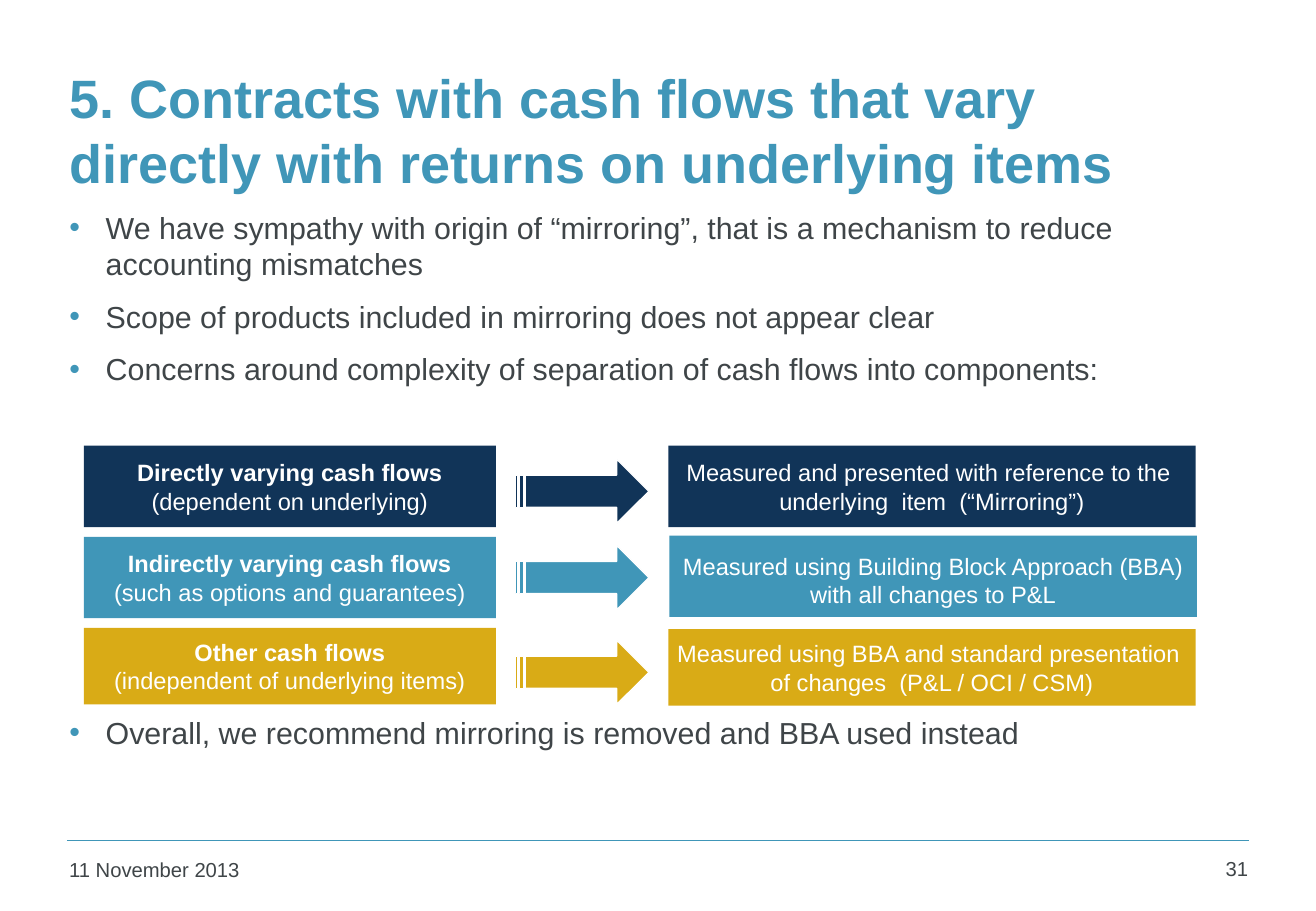
from dataclasses import dataclass

from lxml.etree import SubElement
from pptx import Presentation
from pptx.dml.color import RGBColor
from pptx.enum.shapes import MSO_CONNECTOR as Connector, MSO_SHAPE as Shape
from pptx.enum.text import MSO_ANCHOR as Anchor, MSO_AUTO_SIZE as AutoSize, PP_ALIGN as Align
from pptx.oxml.ns import qn
from pptx.util import Inches, Pt


@dataclass(frozen=True)
class Theme:
    font: str = "Arial"
    blue: str = "4096B8"
    navy: str = "113458"
    gold: str = "D9AB16"
    grey: str = "3F4548"
    white: str = "FFFFFF"
    title: int = 32
    body: int = 18
    label: int = 14
    footer: int = 12


THEME = Theme()

TITLE = "5. Contracts with cash flows that vary directly with returns on underlying items"
# Bullet text and the space before it in points
BULLETS = [
    ("We have sympathy with origin of “mirroring”, that is a mechanism "
     "to reduce accounting mismatches", 0),
    ("Scope of products included in mirroring does not appear clear", 9.5),
    ("Concerns around complexity of separation of cash flows into components:", 9.5),
    ("Overall, we recommend mirroring is removed and BBA used instead", 194),
]


@dataclass(frozen=True)
class FlowRow:
    colour: str
    name: str
    detail: str
    treatment: str
    height: float
    arrow_top: float
    result_left: float = 4.81
    result_shift: float = 0
    result_inset: float = 0


FLOW_ROWS = [
    FlowRow(THEME.navy, "Directly varying cash flows", "(dependent on underlying)",
            "Measured and presented with reference to the  underlying  item  (“Mirroring”)",
            0.67, 0.11),
    FlowRow(THEME.blue, "Indirectly varying cash flows", "(such as options and guarantees)",
            "Measured using Building Block Approach (BBA) with all changes to P&L",
            0.67, 0.07, result_left=4.82, result_shift=-0.01, result_inset=0.06),
    FlowRow(THEME.gold, "Other cash flows", "(independent of underlying items)",
            "Measured using BBA and standard presentation  of changes  (P&L / OCI / CSM)",
            0.63, 0.1, result_shift=0.01),
]


def set_all(target, values):
    for name, value in values.items():
        setattr(target, name, value)


def place(item, box):
    left, top, width, height = map(Inches, box)
    set_all(item, {"left": left, "top": top, "width": width, "height": height})


def write(para, text, size, colour, bold=False, **layout):
    set_all(para, layout)
    span = para.add_run()
    span.text = text
    set_all(span.font, {"name": THEME.font, "size": Pt(size), "bold": bold})
    span.font.color.rgb = RGBColor.from_string(colour)


def add_bullet(para, colour, indent):
    props = para._p.get_or_add_pPr()
    props.set("marL", str(Inches(indent)))
    props.set("indent", str(-Inches(indent)))
    SubElement(SubElement(props, qn("a:buClr")), qn("a:srgbClr"), val=colour)
    SubElement(props, qn("a:buFont"), typeface=THEME.font)
    SubElement(props, qn("a:buChar"), char="•")


def add_block(page, kind, box, colour):
    block = page.shapes.add_shape(kind, *map(Inches, box))
    block.shadow.inherit = False
    block.fill.solid()
    block.fill.fore_color.rgb = RGBColor.from_string(colour)
    block.line.fill.background()
    return block


def add_label(page, box, colour, lines, top_inset=0):
    frame = add_block(page, Shape.RECTANGLE, box, colour).text_frame
    set_all(frame, {"word_wrap": True, "vertical_anchor": Anchor.MIDDLE,
                    "margin_left": 0, "margin_right": 0,
                    "margin_top": Inches(top_inset), "margin_bottom": 0})
    for index, (text, bold) in enumerate(lines):
        para = frame.add_paragraph() if index else frame.paragraphs[0]
        write(para, text, THEME.label, THEME.white, bold, alignment=Align.CENTER)


def add_title(page, box):
    title = page.shapes.title
    place(title, box)
    frame = title.text_frame
    set_all(frame, {"word_wrap": True, "auto_size": AutoSize.NONE,
                    "vertical_anchor": Anchor.MIDDLE})
    write(frame.paragraphs[0], TITLE, THEME.title, THEME.blue, True, alignment=Align.LEFT)


def add_body(page, box):
    body = page.placeholders[1]
    place(body, box)
    frame = body.text_frame
    set_all(frame, {"word_wrap": True, "auto_size": AutoSize.NONE,
                    "vertical_anchor": Anchor.TOP})
    for index, (text, space) in enumerate(BULLETS):
        para = frame.add_paragraph() if index else frame.paragraphs[0]
        write(para, text, THEME.body, THEME.grey, space_before=Pt(space))
        add_bullet(para, THEME.blue, 0.3)


def add_flows(page, left, top, pitch):
    for index, row in enumerate(FLOW_ROWS):
        row_top = top + index * pitch
        # Cash flow type
        add_label(page, (left, row_top, 3.39, row.height), row.colour,
                  [(row.name, True), (row.detail, False)])
        # Measurement
        add_label(page, (left + row.result_left, row_top + row.result_shift, 4.34, row.height),
                  row.colour, [(row.treatment, False)], row.result_inset)
        # Arrow between them
        arrow = add_block(page, Shape.STRIPED_RIGHT_ARROW,
                          (left + 3.55, row_top + row.arrow_top, 1.1, 0.53), row.colour)
        arrow.line.color.rgb = RGBColor.from_string(THEME.white)
        arrow.line.width = Pt(0.75)


def add_footer(page, left, top, width):
    # Rule
    rule = page.shapes.add_connector(Connector.STRAIGHT, Inches(left), Inches(top),
                                     Inches(left + width), Inches(top))
    rule.line.color.rgb = RGBColor.from_string(THEME.blue)
    rule.line.width = Pt(1)
    SubElement(rule._element.spPr, qn("a:effectLst"))
    # Date and page number
    notes = [
        ("11 November 2013", (left - 0.08, top + 0.09, 2.39, 0.36), Align.LEFT),
        ("31", (left + width - 0.68, top + 0.08, 0.77, 0.37), Align.RIGHT),
    ]
    for text, box, alignment in notes:
        frame = page.shapes.add_textbox(*map(Inches, box)).text_frame
        frame.word_wrap = True
        write(frame.paragraphs[0], text, THEME.footer, THEME.grey, alignment=alignment)


def main():
    deck = Presentation()
    set_all(deck, {"slide_width": Inches(10.83), "slide_height": Inches(7.5)})
    page = deck.slides.add_slide(deck.slide_layouts[1])
    add_footer(page, 0.55, 6.92, 9.73)
    add_title(page, (0.47, 0.44, 9.82, 1.25))
    add_body(page, (0.47, 1.67, 9.59, 5.07))
    add_flows(page, 0.69, 3.67, 0.75)
    deck.save("out.pptx")


if __name__ == "__main__":
    main()
